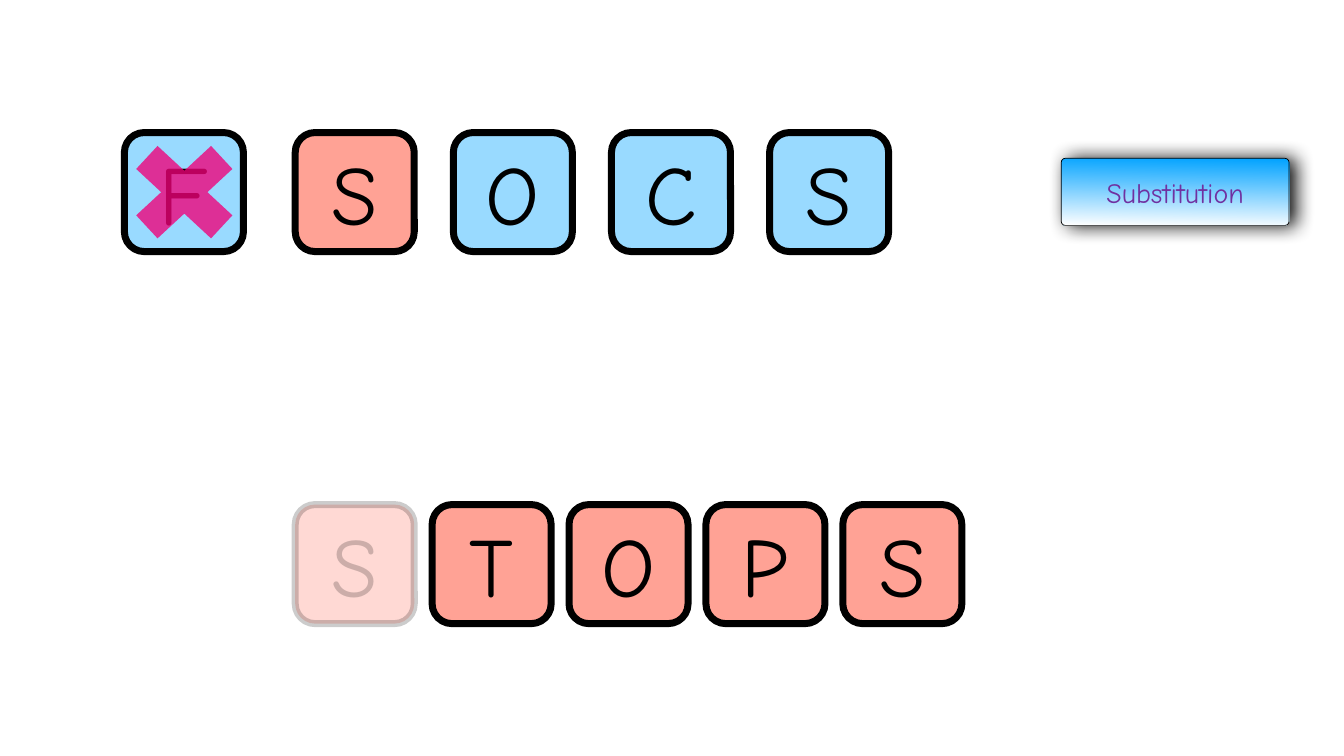
from dataclasses import dataclass

from lxml.etree import SubElement
from pptx import Presentation
from pptx.dml.color import RGBColor as RGB
from pptx.enum.shapes import MSO_SHAPE as SHAPE
from pptx.enum.text import MSO_ANCHOR as ANCHOR, MSO_AUTO_SIZE as FIT, PP_ALIGN as ALIGN
from pptx.oxml.ns import qn
from pptx.shapes.autoshape import Shape
from pptx.slide import Slide
from pptx.util import Cm, Pt


@dataclass(frozen=True)
class Theme:
    font: str = "Comic Neue"
    letter_size: int = 120
    label_size: int = 40
    ink: str = "000000"
    blue: str = "99DAFF"
    coral: str = "FFA295"
    cross: str = "F10079"
    label: str = "7030A0"
    button_top: str = "00A2FF"
    button_bottom: str = "FFFFFF"


@dataclass(frozen=True)
class Tile:
    letter: str
    left: float
    top: float
    fill: str
    faded: bool = False


THEME = Theme()
TILE_SIZE = 6
TOP_ROW, BOTTOM_ROW = 6.68, 25.43
REMOVED_LEFT, FIRST_LEFT = 6.27, 14.88
TOP_STEP, BOTTOM_STEP = 7.97, 6.9


def add_box(s: Slide, kind: SHAPE, left: float, top: float, width: float, height: float) -> Shape:
    sp = s.shapes.add_shape(kind, Cm(left), Cm(top), Cm(width), Cm(height))
    sp.shadow.inherit = False
    return sp


def outline(sp: Shape, width: float) -> None:
    sp.line.color.rgb = RGB.from_string(THEME.ink)
    sp.line.width = Pt(width)


def solid(sp: Shape, color: str) -> None:
    sp.fill.solid()
    sp.fill.fore_color.rgb = RGB.from_string(color)


def set_alpha(sp: Shape, holder: str, percent: int) -> None:
    for color in sp._element.xpath(f".//{holder}/a:solidFill/a:srgbClr"):
        SubElement(color, qn("a:alpha"), val=str(percent * 1000))


def write(sp: Shape, text: str, *, size: int, color: str, fit: FIT = FIT.NONE) -> None:
    tf = sp.text_frame
    tf.word_wrap = True
    tf.auto_size = fit
    tf.vertical_anchor = ANCHOR.MIDDLE
    tf.margin_left = tf.margin_right = tf.margin_top = tf.margin_bottom = Cm(0.15)
    p = tf.paragraphs[0]
    p.alignment = ALIGN.CENTER
    r = p.add_run()
    r.text = text
    r.font.name = THEME.font
    r.font.size = Pt(size)
    r.font.color.rgb = RGB.from_string(color)


def add_tile(s: Slide, tile: Tile) -> None:
    sp = add_box(s, SHAPE.ROUNDED_RECTANGLE, tile.left, tile.top, TILE_SIZE, TILE_SIZE)
    solid(sp, tile.fill)
    outline(sp, 10)
    write(sp, tile.letter, size=THEME.letter_size, color=THEME.ink, fit=FIT.SHAPE_TO_FIT_TEXT)
    if tile.faded:
        for holder, percent in (("p:spPr", 40), ("a:ln", 20), ("a:rPr", 20)):
            set_alpha(sp, holder, percent)


def add_cross(s: Slide) -> None:
    sp = add_box(s, SHAPE.MATH_MULTIPLY, 5.66, 6.32, 7.26, 6.73)
    solid(sp, THEME.cross)
    set_alpha(sp, "p:spPr", 78)
    sp.line.fill.background()


def add_button(s: Slide, text: str) -> None:
    sp = add_box(s, SHAPE.ROUNDED_RECTANGLE, 53.49, 7.98, 11.48, 3.38)
    sp.adjustments[0] = 0.06
    sp.fill.gradient()
    sp.fill.gradient_angle = 269
    for stop, color in zip(sp.fill.gradient_stops, (THEME.button_top, THEME.button_bottom)):
        stop.color.rgb = RGB.from_string(color)
    outline(sp, 1)
    effects = sp._element.spPr.find(qn("a:effectLst"))
    shadow = SubElement(effects, qn("a:outerShdw"), blurRad=str(Pt(28)), dist=str(Pt(9)),
                        dir="0", rotWithShape="0")
    color = SubElement(shadow, qn("a:srgbClr"), val=THEME.ink)
    SubElement(color, qn("a:alpha"), val="97000")
    write(sp, text, size=THEME.label_size, color=THEME.label)


def main() -> None:
    prs = Presentation()
    prs.slide_width, prs.slide_height = Cm(67.74), Cm(38.1)
    s = prs.slides.add_slide(prs.slide_layouts[6])

    add_tile(s, Tile("F", REMOVED_LEFT, TOP_ROW, THEME.blue))
    for i, letter in enumerate("SOCS"):
        fill = THEME.blue if i else THEME.coral
        add_tile(s, Tile(letter, FIRST_LEFT + i * TOP_STEP, TOP_ROW, fill))
    add_cross(s)
    add_button(s, "Substitution")
    for i, letter in enumerate("STOPS"):
        left = FIRST_LEFT + i * BOTTOM_STEP
        add_tile(s, Tile(letter, left, BOTTOM_ROW, THEME.coral, faded=i == 0))

    prs.save("out.pptx")


if __name__ == "__main__":
    main()
